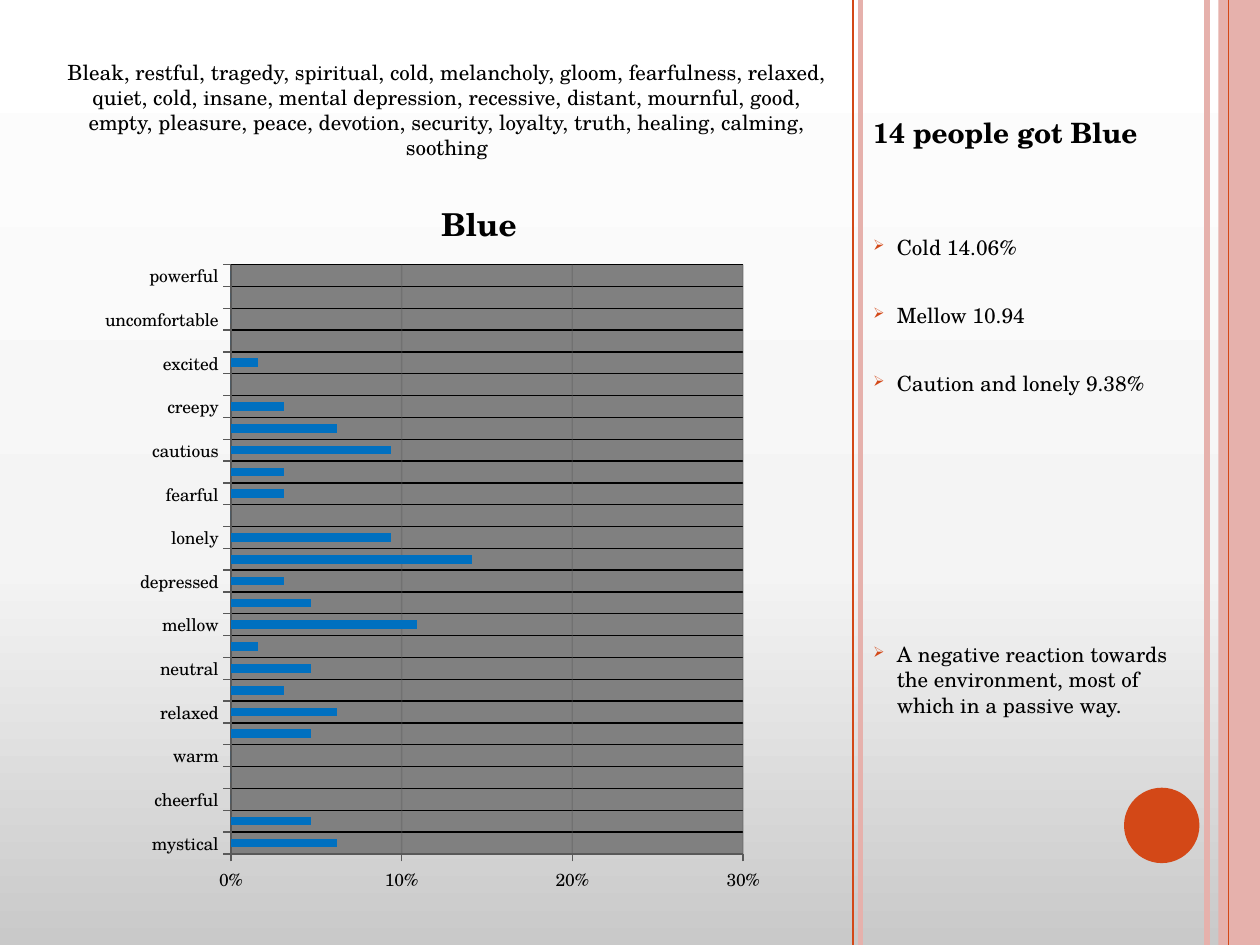
from dataclasses import dataclass
from copy import deepcopy

from lxml import etree
from pptx import Presentation
from pptx.chart.data import CategoryChartData
from pptx.dml.color import RGBColor
from pptx.enum.chart import XL_CHART_TYPE, XL_TICK_MARK
from pptx.enum.shapes import MSO_CONNECTOR, MSO_SHAPE
from pptx.enum.text import PP_ALIGN
from pptx.oxml.ns import qn
from pptx.util import Cm, Pt

BAR_CLUSTERED = XL_CHART_TYPE.BAR_CLUSTERED
TICK_OUTSIDE = XL_TICK_MARK.OUTSIDE
STRAIGHT = MSO_CONNECTOR.STRAIGHT
RECTANGLE, OVAL = MSO_SHAPE.RECTANGLE, MSO_SHAPE.OVAL
CENTER = PP_ALIGN.CENTER

FONT = "TeX Gyre Schola"
BLACK, ORANGE, PINK, BLUE = "000000", "D34817", "E6B1AC", "0070C0"
PLOT_GRAY, GRID_GRAY = "808080", "595959"
PAGE_WIDTH, PAGE_HEIGHT = 25.4, 19.05


@dataclass
class Rule:
    x: float
    color: str
    width: float


@dataclass
class Finding:
    text: str
    space_before: float


RULES = [
    Rule(24.33, PINK, 3),
    Rule(24.77, ORANGE, 0.75),
    Rule(17.35, PINK, 3),
    Rule(17.2, ORANGE, 1),
]
FINDINGS = [
    Finding("Cold 14.06%", 44.6),
    Finding("Mellow 10.94", 20.4),
    Finding("Caution and lonely 9.38%", 20.4),
    Finding("A negative reaction towards the environment, most of which in a passive way.", 136.8),
]
ASSOCIATIONS = (
    "Bleak, restful, tragedy, spiritual, cold, melancholy, gloom, fearfulness, relaxed, "
    "quiet, cold, insane, mental depression, recessive, distant, mournful, good, empty, "
    "pleasure, peace, devotion, security, loyalty, truth, healing, calming, soothing"
)
REACTIONS = {
    "mystical": 0.062, "curious": 0.047, "cheerful": 0, "hopefull": 0, "warm": 0,
    "soothing": 0.047, "relaxed": 0.062, "secure": 0.031, "neutral": 0.047,
    "comfortable": 0.016, "mellow": 0.109, "melancholy": 0.047, "depressed": 0.031,
    "cold": 0.141, "lonely": 0.094, "desperate": 0, "fearful": 0.031, "helpless": 0.031,
    "cautious": 0.094, "scared": 0.062, "creepy": 0.031, "anxious": 0, "excited": 0.016,
    "urgent": 0, "uncomfortable": 0, "angry": 0, "powerful": 0,
}


def rgb(color: str) -> RGBColor:
    return RGBColor.from_string(color)


def add_child(parent, tag: str, **attributes: str):
    return etree.SubElement(parent, qn(tag), attributes)


def paint_background(page, stops: list[tuple[float, str]]) -> None:
    fill = page.background.fill
    fill.gradient()
    fill.gradient_angle = 90
    stop_list = next(page.element.iter(qn("a:gsLst")))
    while len(stop_list) < len(stops):
        stop_list.append(deepcopy(stop_list[0]))
    for stop, (position, color) in zip(fill.gradient_stops, stops):
        stop.position = position
        stop.color.rgb = rgb(color)


def add_solid(page, kind, left: float, top: float, width: float, height: float, color: str) -> None:
    shape = page.shapes.add_shape(kind, Cm(left), Cm(top), Cm(width), Cm(height))
    shape.shadow.inherit = False
    shape.fill.solid()
    shape.fill.fore_color.rgb = rgb(color)
    shape.line.fill.background()


def add_rule(page, rule: Rule) -> None:
    line = page.shapes.add_connector(STRAIGHT, Cm(rule.x), 0, Cm(rule.x), Cm(PAGE_HEIGHT))
    line.line.color.rgb = rgb(rule.color)
    line.line.width = Pt(rule.width)
    add_child(line.element.spPr, "a:effectLst")


def add_text_frame(page, left: float, top: float, width: float, height: float):
    box = page.shapes.add_textbox(Cm(left), Cm(top), Cm(width), Cm(height))
    box.text_frame.word_wrap = True
    return box.text_frame


def style_font(font, size: float, bold: bool = False) -> None:
    font.name, font.size, font.bold = FONT, Pt(size), bold
    font.color.rgb = rgb(BLACK)


def write(paragraph, text: str, size: float, before: float, after: float, bold: bool = False) -> None:
    paragraph.text = text
    paragraph.space_before, paragraph.space_after = Pt(before), Pt(after)
    for span in paragraph.runs:
        style_font(span.font, size, bold)


def add_bullet(paragraph) -> None:
    properties = paragraph._p.get_or_add_pPr()
    indent = Cm(0.48)
    properties.set("marL", str(indent))
    properties.set("indent", str(-indent))
    add_child(add_child(properties, "a:buClr"), "a:srgbClr", val=ORANGE)
    add_child(properties, "a:buSzPct", val="70000")
    add_child(properties, "a:buChar", char="➢")


def place(layout, **values: float) -> None:
    """Fill a chart layout with fractions of the chart area."""
    manual = add_child(layout, "c:manualLayout")
    if "w" in values:
        add_child(manual, "c:layoutTarget", val="inner")
    for name in ("xMode", "yMode"):
        add_child(manual, f"c:{name}", val="edge")
    for name, value in values.items():
        add_child(manual, f"c:{name}", val=str(value))


def style_axis(axis, grid_color: str) -> None:
    axis.major_tick_mark = TICK_OUTSIDE
    axis.has_major_gridlines = True
    for line, color in ((axis.major_gridlines.format.line, grid_color), (axis.format.line, GRID_GRAY)):
        line.color.rgb = rgb(color)
        line.width = Pt(0.75)


def add_reaction_chart(page) -> None:
    data = CategoryChartData(number_format="0.0%")
    data.categories = list(REACTIONS)
    data.add_series("Blue", list(REACTIONS.values()))
    chart = page.shapes.add_chart(BAR_CLUSTERED, Cm(1.9), Cm(3.23), Cm(13.77), Cm(15.04), data).chart
    style_font(chart.font, 10)
    chart.has_legend = False

    # Title
    chart.has_title = True
    title = chart.chart_title
    title.include_in_layout = False
    title.text_frame.text = "Blue"
    style_font(title.text_frame.paragraphs[0].runs[0].font, 18, bold=True)
    title_layout = title._element.find(qn("c:layout"))
    if title_layout is None:
        title_layout = etree.Element(qn("c:layout"))
        title._element.find(qn("c:tx")).addnext(title_layout)
    place(title_layout, x=0.5, y=0.04)

    # Bars
    plot = chart.plots[0]
    plot.gap_width = 150
    plot.vary_by_categories = False
    bars = plot.series[0].format.fill
    bars.solid()
    bars.fore_color.rgb = rgb(BLUE)

    # Axes
    category_axis, value_axis = chart.category_axis, chart.value_axis
    style_axis(category_axis, BLACK)
    style_axis(value_axis, GRID_GRAY)
    value_axis.minimum_scale, value_axis.maximum_scale, value_axis.major_unit = 0, 0.3, 0.1
    value_axis.tick_labels.number_format = "0%"
    value_axis.tick_labels.number_format_is_linked = False
    grid_color = next(value_axis.major_gridlines.format.line._ln.iter(qn("a:srgbClr")))
    add_child(grid_color, "a:alpha", val="36000")
    label_step = etree.Element(qn("c:tickLblSkip"), {"val": "2"})
    category_axis._element.find(qn("c:noMultiLvlLbl")).addprevious(label_step)

    # Plot area
    plot_area = chart._chartSpace.chart.plotArea
    plot_layout = plot_area.find(qn("c:layout"))
    if plot_layout is None:
        plot_layout = etree.Element(qn("c:layout"))
        plot_area.insert(0, plot_layout)
    place(plot_layout, x=0.2, y=0.14, w=0.75, h=0.79)
    plot_fill = add_child(add_child(plot_area, "c:spPr"), "a:solidFill")
    add_child(plot_fill, "a:srgbClr", val=PLOT_GRAY)


def main() -> None:
    deck = Presentation()
    deck.slide_width, deck.slide_height = Cm(PAGE_WIDTH), Cm(PAGE_HEIGHT)
    page = deck.slides.add_slide(deck.slide_layouts[6])

    # Background and side decoration
    paint_background(page, [(0, "C9C9C9"), (0.4, "F4F4F4"), (1, "FFFFFF")])
    add_solid(page, OVAL, 22.66, 15.88, 1.52, 1.52, ORANGE)
    add_solid(page, RECTANGLE, 24.56, 0, 0.84, PAGE_HEIGHT, PINK)
    for rule in RULES:
        add_rule(page, rule)

    # Findings
    findings = add_text_frame(page, 17.35, 2.21, 6.55, 14.94)
    write(findings.paragraphs[0], "14 people got Blue", 16, 1, 4, bold=True)
    for finding in FINDINGS:
        paragraph = findings.add_paragraph()
        write(paragraph, finding.text, 12, finding.space_before, 4)
        add_bullet(paragraph)

    # Chart and associations
    add_reaction_chart(page)
    associations = add_text_frame(page, 1.07, 1.07, 15.88, 2.31).paragraphs[0]
    write(associations, ASSOCIATIONS, 12, 0, 10)
    associations.alignment = CENTER

    deck.save("out.pptx")


if __name__ == "__main__":
    main()
